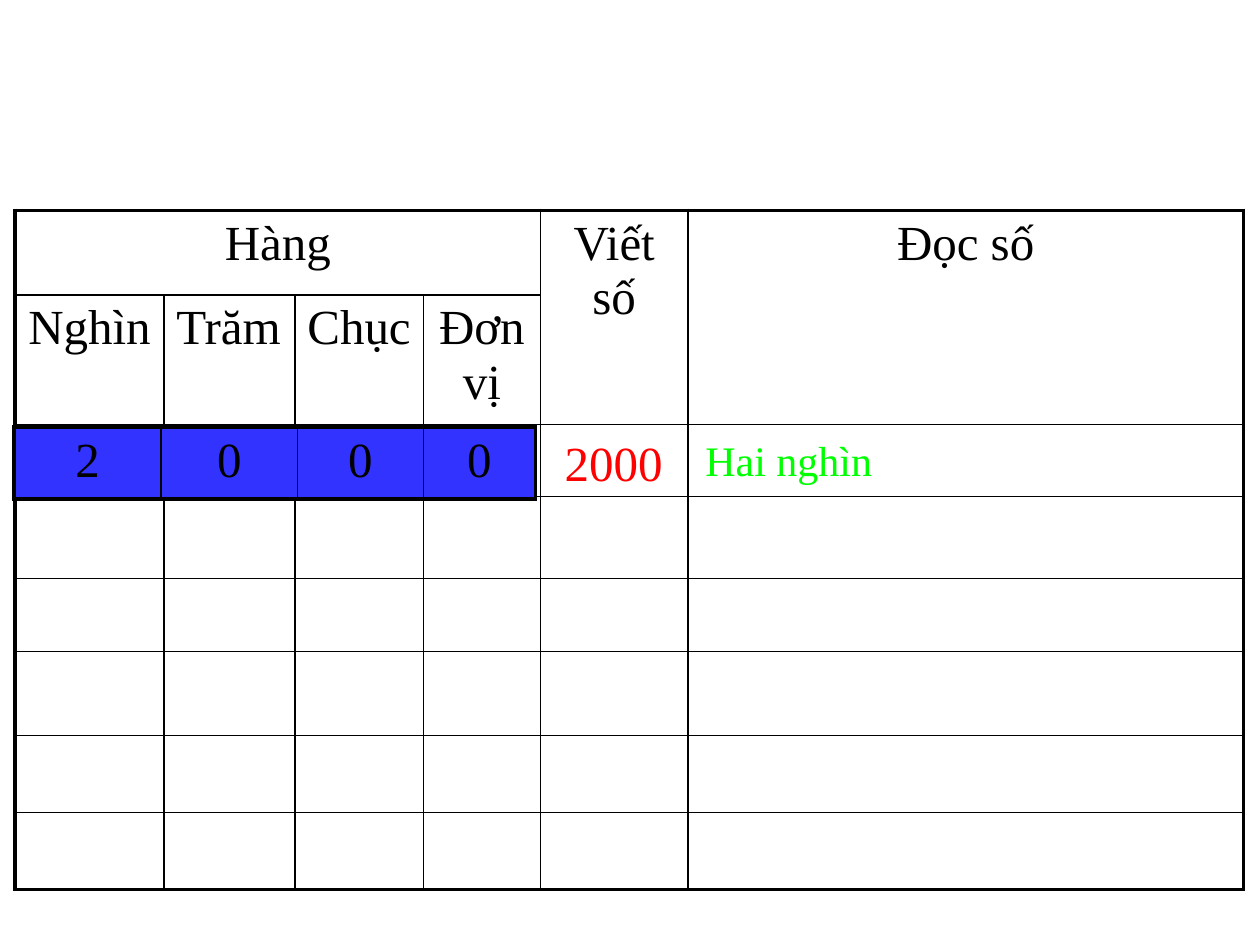
from dataclasses import dataclass

from lxml import etree
from pptx import Presentation
from pptx.dml.color import RGBColor
from pptx.enum.shapes import MSO_SHAPE
from pptx.enum.text import MSO_ANCHOR, PP_ALIGN
from pptx.oxml.ns import qn
from pptx.util import Inches, Pt

RECTANGLE = MSO_SHAPE.RECTANGLE
MIDDLE = MSO_ANCHOR.MIDDLE
CENTER, LEFT = PP_ALIGN.CENTER, PP_ALIGN.LEFT


@dataclass(frozen=True)
class Theme:
    font: str = "Times New Roman"
    black: str = "000000"
    white: str = "FFFFFF"
    blue: str = "3333FF"
    red: str = "FF0000"
    green: str = "00FF00"
    large: float = 28
    medium: float = 24
    outer_line: float = 2.25
    inner_line: float = 1
    thin_line: float = 0.75


THEME = Theme()


def write_text(frame, text, size=THEME.large, color=THEME.black, align=CENTER):
    para = frame.paragraphs[0]
    para.alignment = align
    span = para.add_run()
    span.text = text
    span.font.name = THEME.font
    span.font.size = Pt(size)
    span.font.color.rgb = RGBColor.from_string(color)


def set_border(cell, side, width):
    line = etree.SubElement(cell._tc.get_or_add_tcPr(), qn(f"a:ln{side}"),
                            w=str(Pt(width)))
    fill = etree.SubElement(line, qn("a:solidFill"))
    etree.SubElement(fill, qn("a:srgbClr"), val=THEME.black)


def add_grid(page, left, top, widths, heights, fill=None):
    """Table with a heavy outer frame and light inner lines."""
    last_row, last_column = len(heights) - 1, len(widths) - 1
    grid = page.shapes.add_table(
        len(heights), len(widths), Inches(left), Inches(top),
        Inches(sum(widths)), Inches(sum(heights))).table
    grid.first_row = grid.horz_banding = False
    for column, width in zip(grid.columns, widths):
        column.width = Inches(width)
    for row, height in zip(grid.rows, heights):
        row.height = Inches(height)

    for r in range(len(heights)):
        for c in range(len(widths)):
            cell = grid.cell(r, c)
            on_frame = {"L": c == 0, "R": c == last_column,
                        "T": r == 0, "B": r == last_row}
            for side, outer in on_frame.items():
                set_border(cell, side, THEME.outer_line if outer else THEME.inner_line)
            if fill:
                cell.fill.solid()
                cell.fill.fore_color.rgb = RGBColor.from_string(fill)
            else:
                cell.fill.background()
    return grid


def add_place_value_table(page, left, top):
    grid = add_grid(page, left, top,
                    widths=[1.18, 1.04, 1.02, 0.93, 1.17, 4.41],
                    heights=[0.67, 1.03, 0.57, 0.65, 0.58, 0.67, 0.61, 0.61])
    # Merged headings: first and last cell of each
    for first, last, text in [((0, 0), (0, 3), "Hàng"),
                              ((0, 4), (1, 4), "Viết số"),
                              ((0, 5), (1, 5), "Đọc số")]:
        heading = grid.cell(*first)
        heading.merge(grid.cell(*last))
        write_text(heading.text_frame, text)
    # Names of the places
    for c, text in enumerate(["Nghìn", "Trăm", "Chục", "Đơn vị"]):
        write_text(grid.cell(1, c).text_frame, text,
                   align=LEFT if text == "Trăm" else CENTER)
    # The widest name needs slimmer margins to stay on one line
    thousands = grid.cell(1, 0)
    thousands.margin_left = thousands.margin_right = Inches(0.08)


def add_digit_row(page, left, top, digits):
    grid = add_grid(page, left, top, widths=[1.17, 1.08, 1, 0.89],
                    heights=[0.57], fill=THEME.blue)
    for c, digit in enumerate(digits):
        write_text(grid.cell(0, c).text_frame, digit)


def add_answer(page, left, top, width, height, text, **text_format):
    box = page.shapes.add_shape(RECTANGLE, Inches(left), Inches(top),
                                Inches(width), Inches(height))
    box.shadow.inherit = False
    box.fill.solid()
    box.fill.fore_color.rgb = RGBColor.from_string(THEME.white)
    box.line.color.rgb = RGBColor.from_string(THEME.white)
    box.line.width = Pt(THEME.thin_line)
    box.text_frame.word_wrap = False
    box.text_frame.vertical_anchor = MIDDLE
    write_text(box.text_frame, text, **text_format)


def main():
    deck = Presentation()
    deck.slide_width, deck.slide_height = Inches(10), Inches(7.5)
    page = deck.slides.add_slide(deck.slide_layouts[6])

    add_place_value_table(page, 0.12, 1.67)
    add_digit_row(page, 0.11, 3.39, "2000")

    # The number in digits and in words
    add_answer(page, 4.33, 3.42, 1.08, 0.5, "2000", color=THEME.red)
    add_answer(page, 5.72, 3.4, 1.08, 0.5, "Hai nghìn",
               size=THEME.medium, color=THEME.green)

    deck.save("out.pptx")


if __name__ == "__main__":
    main()
